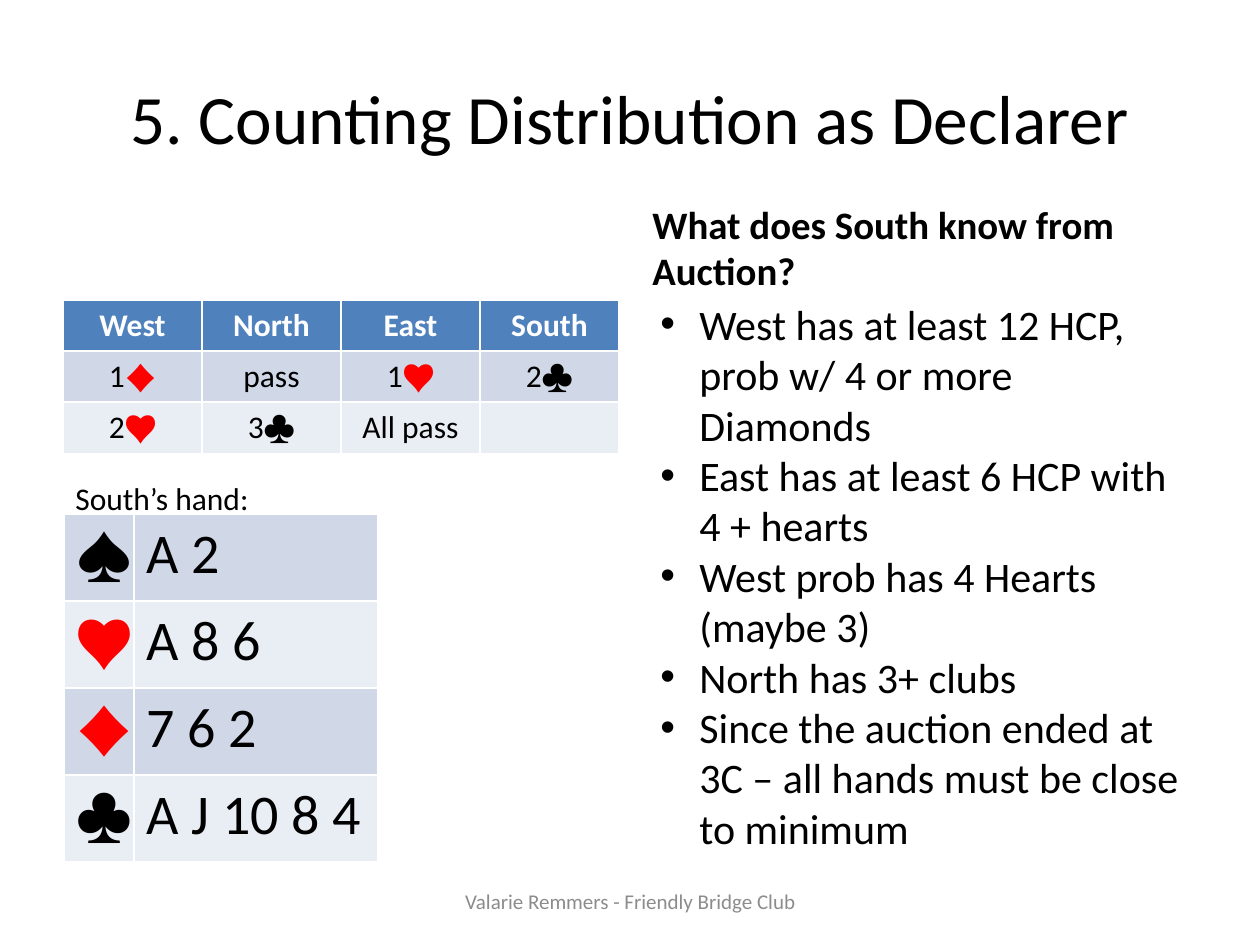
from dataclasses import dataclass

from lxml import etree
from pptx import Presentation
from pptx.dml.color import RGBColor
from pptx.enum.text import MSO_ANCHOR, MSO_AUTO_SIZE, PP_ALIGN
from pptx.oxml.ns import qn
from pptx.util import Emu, Pt

LEFT, CENTER = PP_ALIGN.LEFT, PP_ALIGN.CENTER
TOP, MIDDLE, BOTTOM = MSO_ANCHOR.TOP, MSO_ANCHOR.MIDDLE, MSO_ANCHOR.BOTTOM

PX_PER_INCH = 126
FONT = "Calibri"
RED_SUITS = "♥♦"
BULLET_INDENT = 39
COLORS = {
    "black": "000000",
    "white": "FFFFFF",
    "red": "FF0000",
    "gray": "8C8C8C",
    "header": "4F81BD",
    "odd row": "D0D8E8",
    "even row": "E9EDF4",
}


@dataclass(frozen=True)
class Box:
    left: int
    top: int
    width: int
    height: int


@dataclass(frozen=True)
class TextBlock:
    box: Box
    lines: tuple[str, ...]
    size: float
    color: str = "black"
    bold: bool = False
    align: PP_ALIGN = LEFT
    anchor: MSO_ANCHOR = TOP
    bullets: bool = False


@dataclass(frozen=True)
class CardTable:
    left: int
    top: int
    columns: tuple[int, ...]
    row_height: int
    rows: tuple[tuple[str, ...], ...]
    size: float
    align: PP_ALIGN
    has_header: bool


def px(length: int) -> Emu:
    return Emu(round(length * 914400 / PX_PER_INCH))


def rgb(name: str) -> RGBColor:
    return RGBColor.from_string(COLORS[name])


def place(shape, box: Box) -> None:
    shape.left, shape.top = px(box.left), px(box.top)
    shape.width, shape.height = px(box.width), px(box.height)


def add_run(paragraph, text: str, size: float, color: str, bold: bool) -> None:
    run = paragraph.add_run()
    run.text = text
    run.font.name = FONT
    run.font.size = Pt(size)
    run.font.bold = bold
    run.font.color.rgb = rgb(color)


def add_bullet(paragraph) -> None:
    properties = paragraph._p.get_or_add_pPr()
    properties.set("marL", str(px(BULLET_INDENT)))
    properties.set("indent", str(-px(BULLET_INDENT)))
    etree.SubElement(properties, qn("a:buFont")).set("typeface", "Arial")
    etree.SubElement(properties, qn("a:buChar")).set("char", "•")


def fill_text(shape, block: TextBlock) -> None:
    place(shape, block.box)
    frame = shape.text_frame
    frame.word_wrap = True
    frame.auto_size = MSO_AUTO_SIZE.NONE
    frame.vertical_anchor = block.anchor
    for index, line in enumerate(block.lines):
        paragraph = frame.add_paragraph() if index else frame.paragraphs[0]
        paragraph.alignment = block.align
        if block.bullets:
            add_bullet(paragraph)
        add_run(paragraph, line, block.size, block.color, block.bold)


def add_card_table(slide, cards: CardTable) -> None:
    row_count = len(cards.rows)
    table = slide.shapes.add_table(
        row_count, len(cards.columns), px(cards.left), px(cards.top),
        px(sum(cards.columns)), px(cards.row_height * row_count)).table
    table.first_row = cards.has_header
    for column, width in zip(table.columns, cards.columns):
        column.width = px(width)
    for row_index, texts in enumerate(cards.rows):
        table.rows[row_index].height = px(cards.row_height)
        is_header = cards.has_header and row_index == 0
        body_index = row_index - cards.has_header
        band = "even row" if body_index % 2 else "odd row"
        for column_index, text in enumerate(texts):
            cell = table.cell(row_index, column_index)
            cell.fill.solid()
            cell.fill.fore_color.rgb = rgb("header" if is_header else band)
            paragraph = cell.text_frame.paragraphs[0]
            paragraph.alignment = cards.align
            # Red suits close a call, so they get a run of their own
            rank = text.rstrip(RED_SUITS)
            suit = text[len(rank):]
            if rank:
                add_run(paragraph, rank, cards.size,
                        "white" if is_header else "black", is_header)
            if suit:
                add_run(paragraph, suit, cards.size, "red", False)


TITLE = TextBlock(Box(63, 38, 1134, 157),
                  ("5. Counting Distribution as Declarer",), 39.6,
                  align=CENTER, anchor=MIDDLE)
TEXT_BLOCKS = (
    TextBlock(Box(640, 212, 557, 88),
              ("What does South know from Auction?",), 22.2,
              bold=True, anchor=BOTTOM),
    TextBlock(Box(431, 876, 399, 50),
              ("Valarie Remmers - Friendly Bridge Club",), 12,
              color="gray", align=CENTER, anchor=MIDDLE),
    TextBlock(Box(63, 473, 431, 50), ("South’s hand:",), 18),
    TextBlock(Box(648, 292, 544, 572), (
        "West has at least 12 HCP, prob w/ 4 or more Diamonds",
        "East has at least 6 HCP with 4 + hearts",
        "West prob has 4 Hearts (maybe 3)",
        "North has 3+ clubs",
        "Since the auction ended at 3C – all hands must be close to minimum",
    ), 24, bullets=True),
)
AUCTION = CardTable(63, 300, (139,) * 4, 51, (
    ("West", "North", "East", "South"),
    ("1♦", "pass", "1♥", "2♣"),
    ("2♥", "3♣", "All pass", ""),
), 18, CENTER, has_header=True)
SOUTH_HAND = CardTable(64, 514, (70, 244), 87, (
    ("♠", "A 2"),
    ("♥", "A 8 6"),
    ("♦", "7 6 2"),
    ("♣", "A J 10 8 4"),
), 32, LEFT, has_header=False)


def main() -> None:
    presentation = Presentation()
    presentation.slide_width = px(1260)
    presentation.slide_height = px(945)
    slide = presentation.slides.add_slide(presentation.slide_layouts[5])

    # Title
    fill_text(slide.shapes.title, TITLE)

    # Auction and South's hand
    for cards in (AUCTION, SOUTH_HAND):
        add_card_table(slide, cards)

    # Heading, footer, caption and conclusions
    for block in TEXT_BLOCKS:
        fill_text(slide.shapes.add_textbox(0, 0, 0, 0), block)

    presentation.save("out.pptx")


if __name__ == "__main__":
    main()
